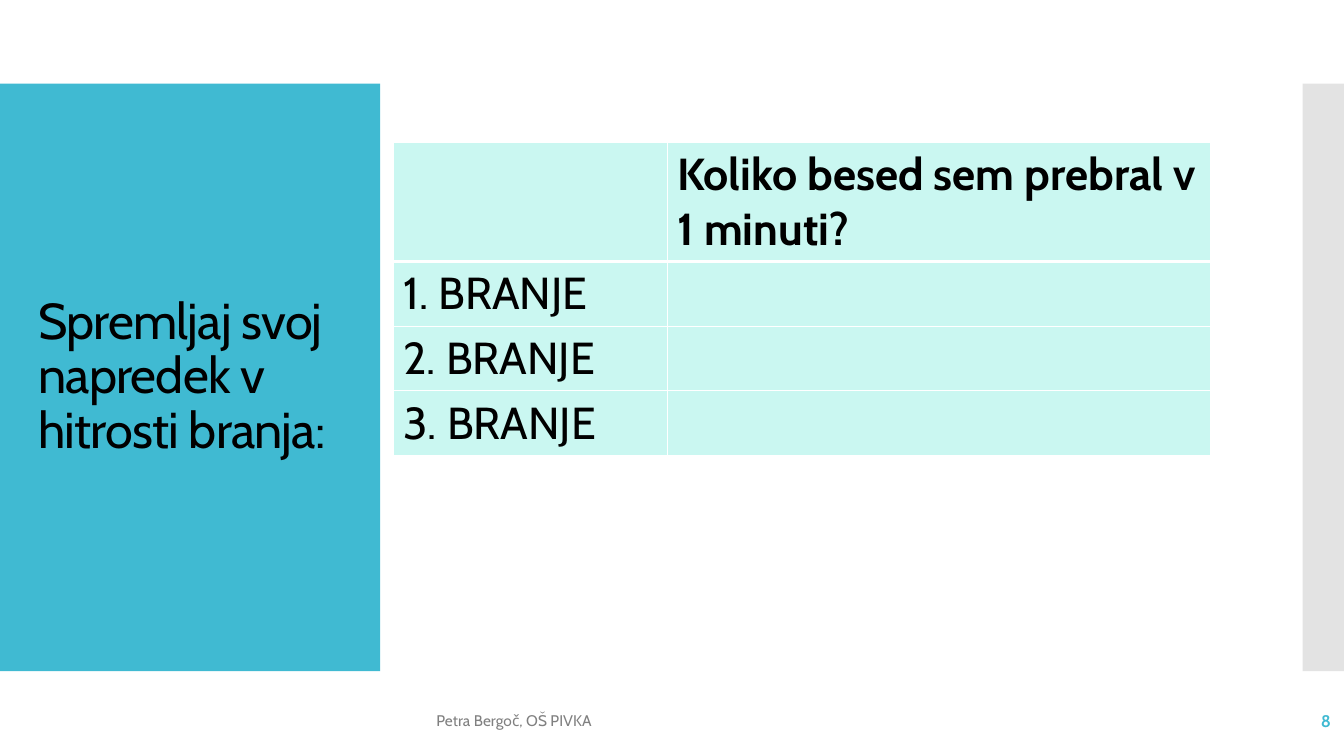
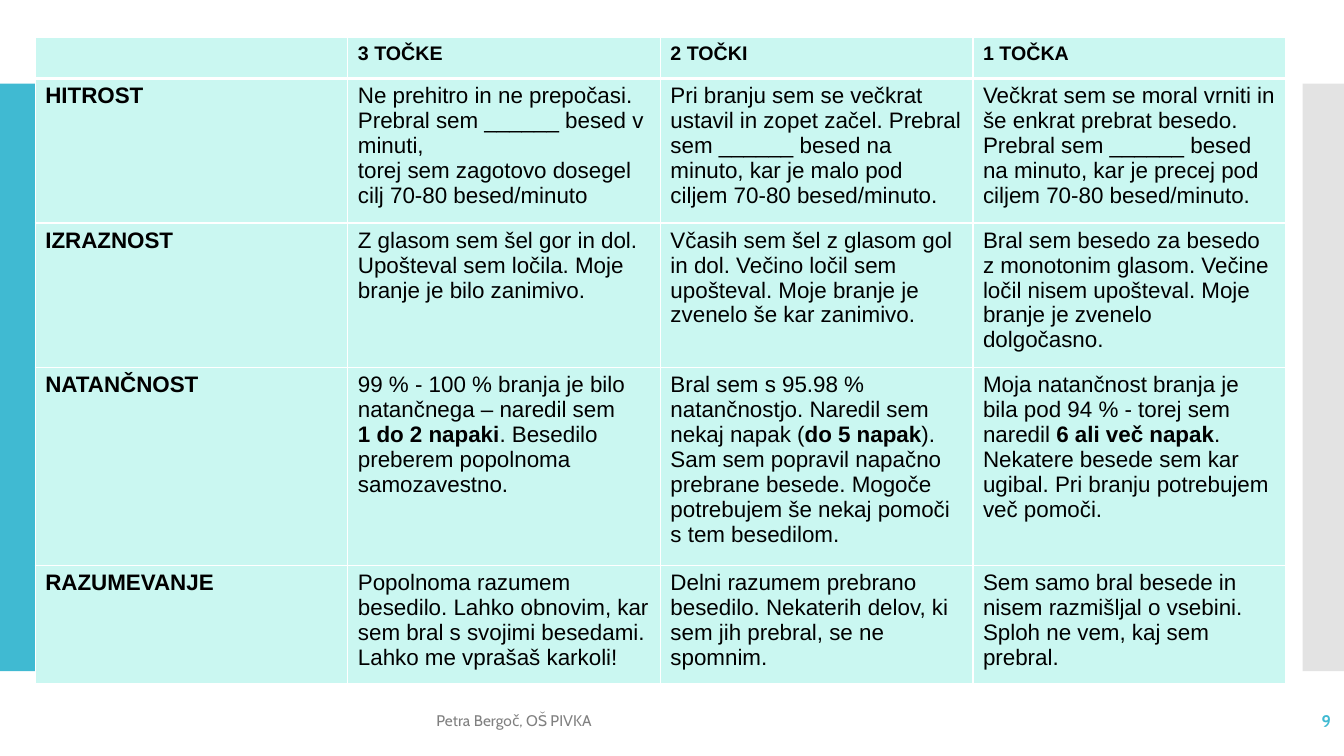
import pptx
import pptx.util
import pptx.dml.color
import pptx.enum.shapes
import pptx.enum.text
from lxml import etree

Inches, Pt = pptx.util.Inches, pptx.util.Pt
ANCHOR, ALIGN = pptx.enum.text.MSO_ANCHOR, pptx.enum.text.PP_ALIGN

COLORS = {"accent": "40BAD2", "edge": "E3E3E3", "cell": "CAF7F1",
          "rule": "FFFFFF", "text": "000000", "footer": "808080"}
FONT = "Cabin"
FOOTER = "Petra Bergoč, OŠ PIVKA"
BANDS = [(0, 3.77, "accent"), (12.92, 0.42, "edge")]

SLIDES = [
    {
        "number": 8,
        "title": "Spremljaj svoj napredek v hitrosti branja:",
        "at": (3.9, 1.41), "columns": [2.72, 5.39], "heights": [1.18] + [0.64] * 3,
        "font": FONT, "header_size": 32, "size": 32, "bold_labels": False,
        "rows": [
            ["", "Koliko besed sem prebral v 1 minuti?"],
            ["1. BRANJE", ""],
            ["2. BRANJE", ""],
            ["3. BRANJE", ""],
        ],
    },
    {
        "number": 9,
        "title": None,
        "at": (0.35, 0.37), "columns": [3.1] * 4, "heights": [0.41, 1.33, 1.34, 1.82, 1.09],
        "font": "Arial", "header_size": 14, "size": 16, "bold_labels": True,
        "rows": [
            ["", "3 TOČKE", "2 TOČKI", "1 TOČKA"],
            ["HITROST",
             "Ne prehitro in ne prepočasi. Prebral sem ______ besed v minuti,\n"
             "torej sem zagotovo dosegel cilj 70-80 besed/minuto",
             "Pri branju sem se večkrat ustavil in zopet začel. Prebral sem ______ besed na "
             "minuto, kar je malo pod ciljem 70-80 besed/minuto.",
             "Večkrat sem se moral vrniti in še enkrat prebrat besedo. Prebral sem ______ besed "
             "na minuto, kar je precej pod ciljem 70-80 besed/minuto."],
            ["IZRAZNOST",
             "Z glasom sem šel gor in dol. Upošteval sem ločila. Moje branje je bilo zanimivo.",
             "Včasih sem šel z glasom gol in dol. Večino ločil sem upošteval. Moje branje je "
             "zvenelo še kar zanimivo.",
             "Bral sem besedo za besedo z monotonim glasom. Večine ločil nisem upošteval. Moje "
             "branje je zvenelo dolgočasno."],
            ["NATANČNOST",
             "99 % - 100 % branja je bilo natančnega – naredil sem\n"
             "**1 do 2 napaki**. Besedilo preberem popolnoma samozavestno.",
             "Bral sem s 95.98 % natančnostjo. Naredil sem nekaj napak (**do 5 napak**). Sam sem "
             "popravil napačno prebrane besede. Mogoče potrebujem še nekaj pomoči s tem besedilom.",
             "Moja natančnost branja je bila pod 94 % - torej sem naredil **6 ali več napak**. "
             "Nekatere besede sem kar ugibal. Pri branju potrebujem več pomoči."],
            ["RAZUMEVANJE",
             "Popolnoma razumem besedilo. Lahko obnovim, kar sem bral s svojimi besedami. "
             "Lahko me vprašaš karkoli!",
             "Delni razumem prebrano besedilo. Nekaterih delov, ki sem jih prebral, se ne spomnim.",
             "Sem samo bral besede in nisem razmišljal o vsebini. Sploh ne vem, kaj sem prebral."],
        ],
    },
]


def rgb(color):
    return pptx.dml.color.RGBColor.from_string(COLORS[color])


def style(paragraph, size, color="text", name=FONT, bold=False):
    font = paragraph.font
    font.size, font.name, font.bold = Pt(size), name, bold
    font.color.rgb = rgb(color)


def add_bands(slide):
    for left, width, color in BANDS:
        band = slide.shapes.add_shape(pptx.enum.shapes.MSO_SHAPE.RECTANGLE, Inches(left),
                                      Inches(0.83), Inches(width), Inches(5.83))
        band.shadow.inherit = False
        band.fill.solid()
        band.fill.fore_color.rgb = rgb(color)
        band.line.fill.background()


def set_title(slide, text):
    title = slide.shapes.title
    title.left, title.top = Inches(0.28), Inches(1.23)
    title.width, title.height = Inches(3.22), Inches(5.03)
    frame = title.text_frame
    frame.text = text
    frame.auto_size = pptx.enum.text.MSO_AUTO_SIZE.NONE
    frame.vertical_anchor = ANCHOR.MIDDLE
    heading = frame.paragraphs[0]
    heading.alignment = ALIGN.LEFT
    heading.line_spacing = 0.9
    style(heading, 36)
    heading.font._element.set("spc", "-60")
    slide.shapes._spTree.append(title._element)


def add_footer_text(slide, left, width, text, align, **look):
    frame = slide.shapes.add_textbox(Inches(left), Inches(6.95),
                                     Inches(width), Inches(0.4)).text_frame
    frame.word_wrap = True
    frame.vertical_anchor = ANCHOR.MIDDLE
    frame.text = text
    frame.paragraphs[0].alignment = align
    style(frame.paragraphs[0], **look)


def set_borders(cell, top, bottom):
    properties = cell._tc.get_or_add_tcPr()
    namespace = properties.nsmap["a"]
    for index, (side, points) in enumerate([("L", 1), ("R", 1), ("T", top), ("B", bottom)]):
        line = etree.Element(f"{{{namespace}}}ln{side}", w=str(Pt(points)))
        fill = etree.SubElement(line, f"{{{namespace}}}solidFill")
        etree.SubElement(fill, f"{{{namespace}}}srgbClr", val=COLORS["rule"])
        properties.insert(index, line)


def fill_cell(cell, text, size, name, bold):
    for index, line in enumerate(text.split("\n")):
        frame = cell.text_frame
        paragraph = frame.add_paragraph() if index else frame.paragraphs[0]
        style(paragraph, size, name=name, bold=bold)
        for part, words in enumerate(line.split("**")):
            if words:
                run = paragraph.add_run()
                run.text = words
                if part % 2:
                    run.font.bold = True


def add_score_table(slide, content):
    rows, columns, heights = content["rows"], content["columns"], content["heights"]
    left, top = content["at"]
    table = slide.shapes.add_table(len(rows), len(columns), Inches(left), Inches(top),
                                   Inches(sum(columns)), Inches(sum(heights))).table
    table.first_row = table.horz_banding = False
    for column, width in zip(table.columns, columns):
        column.width = Inches(width)
    for r, texts in enumerate(rows):
        table.rows[r].height = Inches(heights[r])
        for c, text in enumerate(texts):
            cell = table.cell(r, c)
            cell.fill.solid()
            cell.fill.fore_color.rgb = rgb("cell")
            set_borders(cell, 3 if r == 1 else 1, 3 if r == 0 else 1)
            size = content["size"] if r else content["header_size"]
            bold = r == 0 or (c == 0 and content["bold_labels"])
            fill_cell(cell, text, size, content["font"], bold)


def main():
    deck = pptx.Presentation()
    deck.slide_width, deck.slide_height = Inches(13.33), Inches(7.5)
    for content in SLIDES:
        slide = deck.slides.add_slide(deck.slide_layouts[5 if content["title"] else 6])
        add_bands(slide)
        if content["title"]:
            set_title(slide, content["title"])
        add_score_table(slide, content)
        add_footer_text(slide, 4.23, 6.46, FOOTER, ALIGN.LEFT, size=11, color="footer")
        add_footer_text(slide, 11.63, 1.67, str(content["number"]), ALIGN.RIGHT,
                        size=12, color="accent", bold=True)
    deck.save("out.pptx")


if __name__ == "__main__":
    main()
